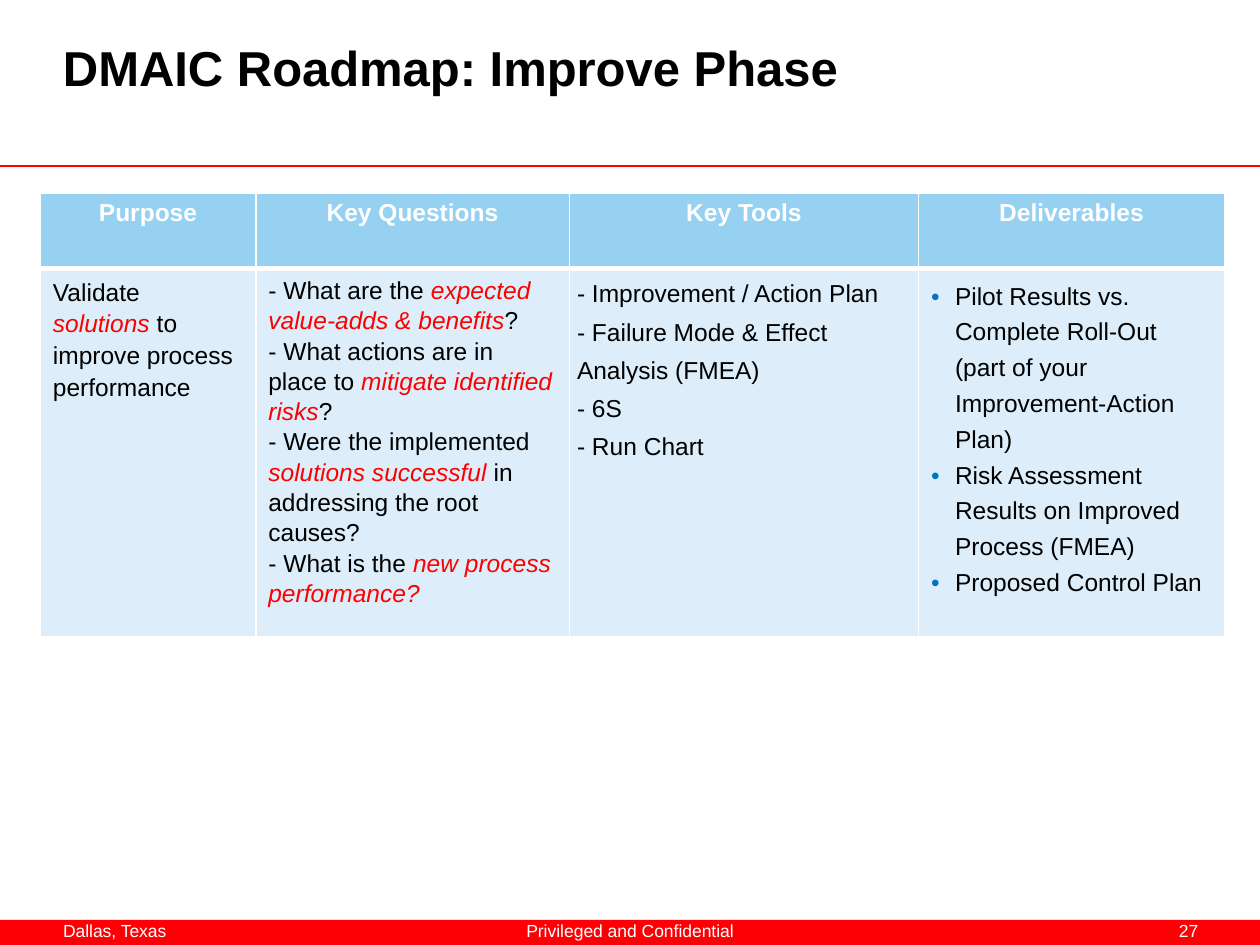
"""Build the DMAIC Improve phase roadmap slide."""
from lxml import etree
from pptx import Presentation
from pptx.dml.color import RGBColor
from pptx.enum import shapes, text
from pptx.oxml import ns
from pptx.util import Inches, Pt

COLORS = {
    "red": "FC0006",
    "emphasis": "FF0000",
    "header": "96D1F2",
    "body": "DDEEFA",
    "bullet": "0076BE",
    "black": "000000",
    "white": "FFFFFF",
}
FONT = "Arial"
ALIGN = text.PP_ALIGN
HEADINGS = ["Purpose", "Key Questions", "Key Tools", "Deliverables"]
PURPOSE = ["Validate* solutions* to improve process performance"]
QUESTIONS = [
    "- What are the *expected value-adds & benefits*?",
    "- What actions are in place to* mitigate identified risks*?",
    "- Were the implemented *solutions successful* in addressing the root causes?",
    "- What is the *new process performance?*",
]
TOOLS = [
    "- Improvement / Action Plan",
    "- Failure Mode & Effect Analysis (FMEA)",
    "- 6S",
    "- Run Chart",
]
DELIVERABLES = [
    "Pilot Results vs. Complete Roll-Out (part of your Improvement-Action Plan)",
    "Risk Assessment Results on Improved Process (FMEA)",
    "Proposed Control Plan",
]


def rgb(name):
    """Return the named colour."""
    return RGBColor.from_string(COLORS[name])


def add_element(parent, tag, **attributes):
    """Append a DrawingML element and return it."""
    return etree.SubElement(parent, ns.qn(f"a:{tag}"), attributes)


def add_list_format(paragraph, bulleted):
    """Give a paragraph its tab stop and, if asked, a hanging bullet."""
    properties = paragraph._p.get_or_add_pPr()
    if bulleted:
        properties.set("marL", str(Inches(0.19)))
        properties.set("indent", str(-Inches(0.19)))
        bullet_color = add_element(properties, "buClr")
        add_element(bullet_color, "srgbClr", val=COLORS["bullet"])
        add_element(properties, "buFont", typeface=FONT)
        add_element(properties, "buChar", char="•")
    tabs = add_element(properties, "tabLst")
    add_element(tabs, "tab", pos=str(Inches(0.43)), algn="l")


def write(frame, lines, size=14, color="black", bold=False, align=ALIGN.LEFT,
          spacing=1.0, tabbed=False, bulleted=False):
    """Write lines into a frame, with starred parts in red italics."""
    for index, line in enumerate(lines):
        paragraph = frame.paragraphs[0] if index == 0 else frame.add_paragraph()
        if tabbed:
            add_list_format(paragraph, bulleted)
        paragraph.alignment = align
        paragraph.line_spacing = spacing
        for part_index, part in enumerate(line.split("*")):
            if not part:
                continue
            emphasized = part_index % 2 == 1
            run = paragraph.add_run()
            run.text = part
            run.font.name = FONT
            run.font.size = Pt(size)
            run.font.bold = bold
            run.font.italic = emphasized
            run.font.color.rgb = rgb("emphasis" if emphasized else color)


def add_text(slide, box, lines, margins=(0, 0), **style):
    """Add a wrapped text box with the given side and top margins."""
    frame = slide.shapes.add_textbox(*map(Inches, box)).text_frame
    frame.word_wrap = True
    frame.margin_left = frame.margin_right = Inches(margins[0])
    frame.margin_top = frame.margin_bottom = Inches(margins[1])
    write(frame, lines, **style)


def add_heading(slide, left, top, width, height):
    """Place the title and the full-width rule under it."""
    add_text(slide, (left, top, width, height),
             ["DMAIC Roadmap: Improve Phase"], size=28, bold=True)
    rule = slide.shapes.add_connector(
        shapes.MSO_CONNECTOR.STRAIGHT, 0, Inches(1.32), Inches(10), Inches(1.32))
    rule.line.color.rgb = rgb("red")
    rule.line.width = Pt(1)
    add_element(rule._element.spPr, "effectLst")


def add_footer(slide, left, top, width, height):
    """Place the red footer band and its three labels."""
    band = slide.shapes.add_shape(
        shapes.MSO_SHAPE.RECTANGLE, *map(Inches, (left, top, width, height)))
    band.shadow.inherit = False
    band.fill.solid()
    band.fill.fore_color.rgb = rgb("red")
    band.line.fill.background()
    labels = [
        ("Dallas, Texas", 0.5, 1.19, ALIGN.LEFT),
        ("Privileged and Confidential", 3.81, 2.38, ALIGN.CENTER),
        ("27", 8.66, 0.85, ALIGN.RIGHT),
    ]
    for label, offset, label_width, align in labels:
        add_text(slide, (left + offset, top, label_width, height), [label],
                 size=10, color="white", align=align)


def style_cell(cell, fill, top_width, bottom_width):
    """Fill a cell and draw its white borders."""
    properties = cell._tc.get_or_add_tcPr()
    borders = {"lnL": 1, "lnR": 1, "lnT": top_width, "lnB": bottom_width}
    for tag, width in borders.items():
        border = add_element(properties, tag, w=str(Pt(width)))
        border_fill = add_element(border, "solidFill")
        add_element(border_fill, "srgbClr", val=COLORS["white"])
    cell.fill.solid()
    cell.fill.fore_color.rgb = rgb(fill)


def add_roadmap(slide, left, top, width, height):
    """Place the roadmap table and the key tools list over its third column."""
    table = slide.shapes.add_table(
        2, 4, *map(Inches, (left, top, width, height))).table
    header_height = 0.6
    table.rows[0].height = Inches(header_height)
    table.rows[1].height = Inches(height - header_height)
    for column, column_width in zip(table.columns, [1.71, 2.49, 2.77, 2.43]):
        column.width = Inches(column_width)
    for index, heading in enumerate(HEADINGS):
        header, body = table.cell(0, index), table.cell(1, index)
        style_cell(header, "header", 1, 3)
        style_cell(body, "body", 3, 1)
        write(header.text_frame, [heading], color="white", bold=True,
              align=ALIGN.CENTER)
    write(table.cell(1, 0).text_frame, PURPOSE, spacing=1.15)
    write(table.cell(1, 1).text_frame, QUESTIONS, spacing=1.1)
    write(table.cell(1, 3).text_frame, DELIVERABLES, spacing=1.3,
          tabbed=True, bulleted=True)
    add_text(slide, (left + 4.2, top + 0.58, 2.7, 1.9), TOOLS,
             margins=(0.06, 0.03), spacing=1.3, tabbed=True)


def main():
    """Build and save the slide."""
    deck = Presentation()
    deck.slide_width, deck.slide_height = Inches(10), Inches(7.5)
    slide = deck.slides.add_slide(deck.slide_layouts[6])
    add_footer(slide, 0, 7.3, 10, 0.2)
    add_heading(slide, 0.5, 0.3, 9, 1.03)
    add_roadmap(slide, 0.32, 1.53, 9.4, 3.33)
    deck.save("out.pptx")


if __name__ == "__main__":
    main()
